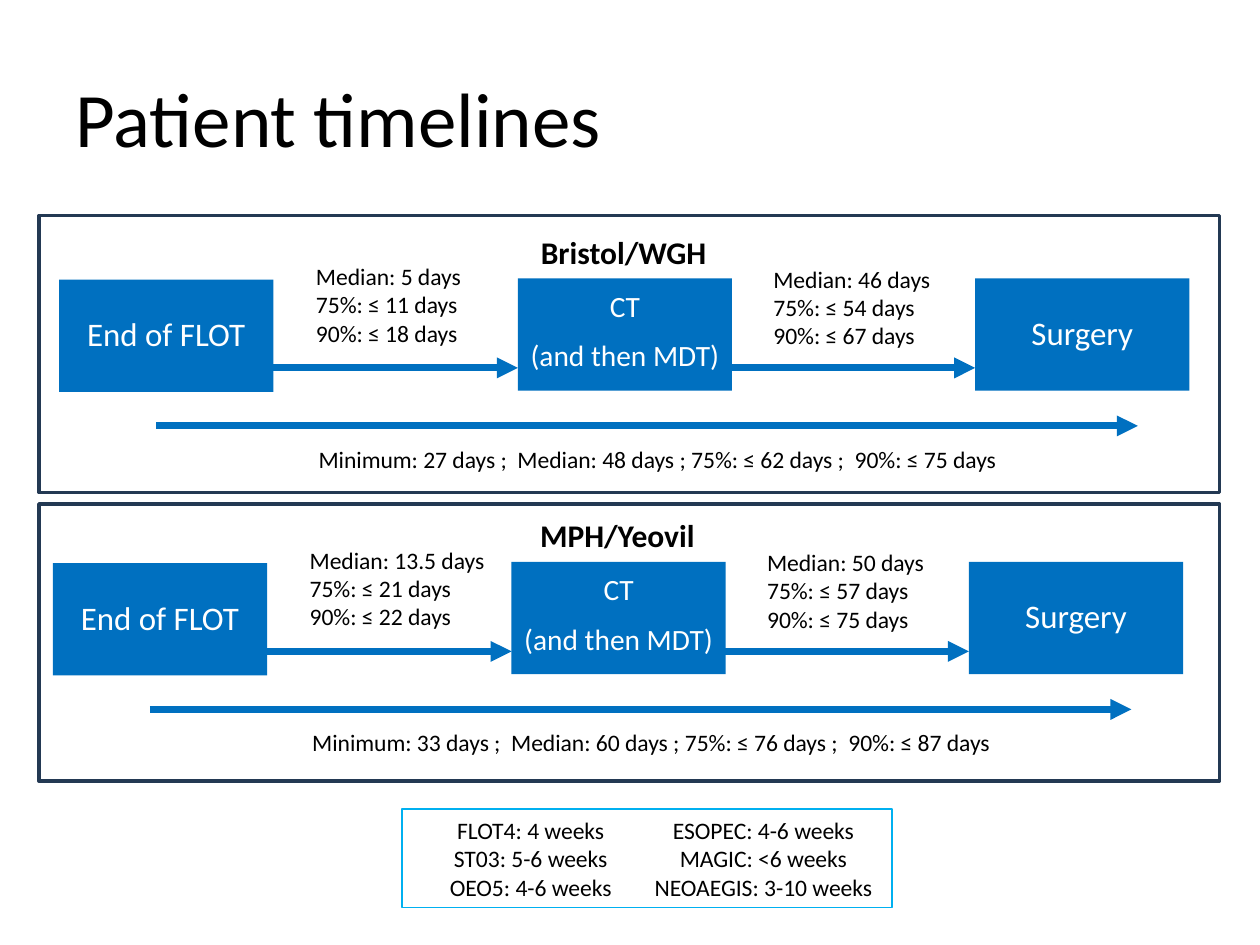
from lxml.etree import SubElement
from pptx import Presentation
from pptx.dml.color import RGBColor
from pptx.enum.shapes import MSO_CONNECTOR, MSO_SHAPE
from pptx.enum.text import MSO_ANCHOR, PP_ALIGN
from pptx.oxml.ns import qn
from pptx.util import Inches, Pt

TITLE = "Patient timelines"
BLUE, NAVY, CYAN, BLACK, WHITE = "0070C0", "233953", "00B0F0", "000000", "FFFFFF"
STAGES = [
    ("End of FLOT", 0.47, 2.22, 18.8, 0.9),
    ("CT\n(and then MDT)", 4.11, 2.21, 16.8, 0.7),
    ("Surgery", 7.74, 2.21, 18.8, 0.9),
]
ARROWS = [(2.17, 4.11, 2.92), (5.8, 7.74, 2.92), (1.24, 9.03, 3.38)]
TIMELINES = [
    {
        "site": "Bristol/WGH",
        "to_scan": "Median: 5 days\n75%: ≤ 11 days\n90%: ≤ 18 days",
        "to_surgery": "Median: 46 days\n75%: ≤ 54 days\n90%: ≤ 67 days",
        "overall": "Minimum: 27 days ;  Median: 48 days ; 75%: ≤ 62 days ;  90%: ≤ 75 days",
        "frame_top": 1.71,
        "shift": (0, 0),
    },
    {
        "site": "MPH/Yeovil",
        "to_scan": "Median: 13.5 days\n75%: ≤ 21 days\n90%: ≤ 22 days",
        "to_surgery": "Median: 50 days\n75%: ≤ 57 days\n90%: ≤ 75 days",
        "overall": "Minimum: 33 days ;  Median: 60 days ; 75%: ≤ 76 days ;  90%: ≤ 87 days",
        "frame_top": 4,
        "shift": (-0.05, 2.25),
    },
]
TRIALS = [
    "FLOT4: 4 weeks", "ST03: 5-6 weeks", "OEO5: 4-6 weeks",
    "ESOPEC: 4-6 weeks", "MAGIC: <6 weeks", "NEOAEGIS: 3-10 weeks",
]


def rgb(value):
    return RGBColor.from_string(value)


def write(shape, text, size, color=BLACK, align=PP_ALIGN.LEFT,
          anchor=MSO_ANCHOR.TOP, bold=False):
    frame = shape.text_frame
    frame.text = text
    frame.word_wrap = True
    frame.vertical_anchor = anchor
    for paragraph in frame.paragraphs:
        paragraph.alignment = align
        for run in paragraph.runs:
            run.font.name = "Calibri"
            run.font.size = Pt(size)
            run.font.bold = bold
            run.font.color.rgb = rgb(color)
    return frame


def add_label(slide, box, text, size=13.5, **style):
    label = slide.shapes.add_textbox(*map(Inches, box))
    write(label, text, size, **style)


def add_box(slide, box, fill=None, line=None, width=1):
    rectangle = slide.shapes.add_shape(MSO_SHAPE.RECTANGLE, *map(Inches, box))
    rectangle.shadow.inherit = False
    if fill:
        rectangle.fill.solid()
        rectangle.fill.fore_color.rgb = rgb(fill)
    else:
        rectangle.fill.background()
    if line:
        rectangle.line.color.rgb = rgb(line)
        rectangle.line.width = Pt(width)
    else:
        rectangle.line.fill.background()
    return rectangle


def add_stage(slide, text, left, top, size, spacing):
    stage = add_box(slide, (left, top, 1.7, 0.89), fill=BLUE)
    frame = write(stage, text, size, WHITE, PP_ALIGN.CENTER, MSO_ANCHOR.MIDDLE)
    frame.margin_left = frame.margin_right = 0
    frame.margin_top = frame.margin_bottom = Inches(0.04)
    for paragraph in frame.paragraphs:
        paragraph.line_spacing = spacing
        paragraph.space_before = Pt(12)
        paragraph.space_after = Pt(2)


def add_arrow(slide, start, end, y):
    arrow = slide.shapes.add_connector(
        MSO_CONNECTOR.STRAIGHT, Inches(start), Inches(y), Inches(end), Inches(y))
    arrow.line.color.rgb = rgb(BLUE)
    arrow.line.width = Pt(4)
    SubElement(arrow.line._get_or_add_ln(), qn("a:tailEnd"), type="triangle")
    SubElement(arrow._element.spPr, qn("a:effectLst"))


def add_timeline(slide, timeline):
    dx, dy = timeline["shift"]
    add_box(slide, (0.31, timeline["frame_top"], 9.37, 2.2), line=NAVY, width=2)
    for text, left, top, size, spacing in STAGES:
        add_stage(slide, text, left + dx, top + dy, size, spacing)
    for start, end, y in ARROWS:
        add_arrow(slide, start + dx, end + dx, y + dy)
    add_label(slide, (4.1 + dx, 1.8 + dy, 1.7, 0.4), timeline["site"], 18,
              align=PP_ALIGN.CENTER, bold=True)
    add_label(slide, (2.41 + dx, 2.03 + dy, 1.7, 0.78), timeline["to_scan"])
    add_label(slide, (6.04 + dx, 2.05 + dy, 1.7, 0.78), timeline["to_surgery"])
    add_label(slide, (2.43 + dx, 3.48 + dy, 6.84, 0.33), timeline["overall"])


def main():
    deck = Presentation()
    deck.slide_width, deck.slide_height = Inches(10), Inches(7.5)
    slide = deck.slides.add_slide(deck.slide_layouts[5])
    title = slide.shapes.title
    title.left, title.top = Inches(0.5), Inches(0.3)
    title.width, title.height = Inches(9), Inches(1.25)
    write(title, TITLE, 44, anchor=MSO_ANCHOR.MIDDLE)

    for timeline in TIMELINES:
        add_timeline(slide, timeline)

    trials = add_box(slide, (3.19, 6.42, 3.89, 0.78), line=CYAN, width=0.75)
    frame = write(trials, "\n".join(TRIALS), 13.5, align=PP_ALIGN.CENTER,
                  anchor=MSO_ANCHOR.BOTTOM)
    frame._txBody.bodyPr.set("numCol", "2")
    deck.save("out.pptx")


if __name__ == "__main__":
    main()
